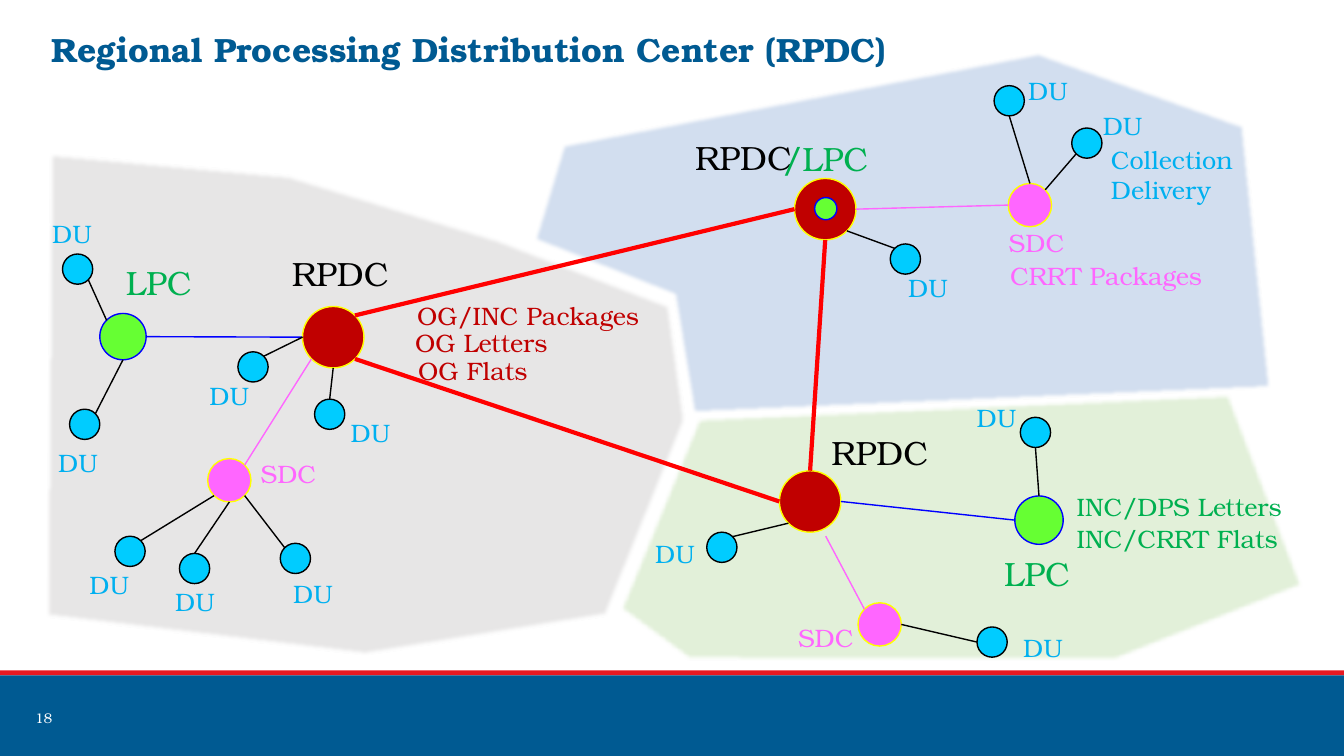
import math

import pptx
import pptx.dml.color
import pptx.enum.shapes
import pptx.enum.text
import pptx.oxml.ns
import pptx.util
from lxml import etree

ROWS, COLS = 75, 133.3  # square grid cells, a tenth of an inch each
SHAPE = pptx.enum.shapes.MSO_SHAPE
ALIGN = pptx.enum.text.PP_ALIGN
ANCHOR = pptx.enum.text.MSO_ANCHOR

NAVY, CRIMSON, WHITE, BLACK = "005A92", "E71921", "FFFFFF", "000000"
RED, DARK_RED, YELLOW, BLUE = "FF0000", "C00000", "FFFF00", "0000FF"
PINK, GREEN, SKY = "FF66FF", "00B050", "00B0F0"

# Facility kind: diameter, fill, outline
NODES = {
    "RPDC": (6.1, DARK_RED, YELLOW),
    "LPC": (4.6, "66FF33", BLUE),
    "big LPC": (4.8, "66FF33", BLUE),
    "inner LPC": (2.2, "66FF33", BLUE),
    "SDC": (4.3, PINK, YELLOW),
    "DU": (3, "00CCFF", BLACK),
}
# Label kind: box width, box height, text size, colour
LABELS = {
    "RPDC": (12.9, 5, 24, BLACK),
    "LPC": (12.9, 5, 24, GREEN),
    "/LPC": (12.9, 5, 24, GREEN),
    "SDC": (8.4, 4, 18, PINK),
    "DU": (6.1, 4, 18, SKY),
}
COMPASS = ("E", "SE", "S", "SW", "W", "NW", "N", "NE")


def rgb(value):
    return pptx.dml.color.RGBColor.from_string(value)


class Board:
    font = "TeX Gyre Bonum"

    def __init__(self, prs):
        self.s = prs.slides.add_slide(prs.slide_layouts[6])
        self.cell = prs.slide_height / ROWS

    def emu(self, *lengths):
        return [pptx.util.Emu(round(n * self.cell)) for n in lengths]

    def shape(self, kind, x, y, w, h, fill, line=None):
        sp = self.s.shapes.add_shape(kind, *self.emu(x, y, w, h))
        self.paint(sp, fill, line)

    def paint(self, sp, fill, line=None):
        sp.shadow.inherit = False
        sp.fill.solid()
        sp.fill.fore_color.rgb = rgb(fill)
        if line:
            sp.line.color.rgb = rgb(line)
            sp.line.width = pptx.util.Pt(1)
        else:
            sp.line.fill.background()

    def region(self, fill, points):
        corners = [self.emu(*point) for point in points]
        builder = self.s.shapes.build_freeform(*corners[0], scale=1.0)
        builder.add_line_segments(corners[1:], close=True)
        sp = builder.convert_to_shape()
        self.paint(sp, fill)
        effects = sp._element.spPr.find(pptx.oxml.ns.qn("a:effectLst"))
        etree.SubElement(effects, pptx.oxml.ns.qn("a:softEdge"), rad="31750")

    def node(self, kind, x, y):
        size, fill, line = NODES[kind]
        self.shape(SHAPE.OVAL, x - size / 2, y - size / 2, size, size, fill, line)
        return x, y, size / 2

    def rim(self, node, side):
        """Point on a circle in a compass direction."""
        x, y, radius = node
        angle = COMPASS.index(side) * math.pi / 4
        return x + radius * math.cos(angle), y + radius * math.sin(angle)

    def link(self, start, end, color=BLACK, width=1):
        line = self.s.shapes.add_connector(
            pptx.enum.shapes.MSO_CONNECTOR.STRAIGHT, *self.emu(*start, *end))
        line.line.color.rgb = rgb(color)
        line.line.width = pptx.util.Pt(width)
        etree.SubElement(line._element.spPr, pptx.oxml.ns.qn("a:effectLst"))

    def text(self, lines, x, y, w, h, size, color, align=ALIGN.LEFT,
             bold=False, anchor=ANCHOR.TOP, spacing=1.0):
        tf = self.s.shapes.add_textbox(*self.emu(x, y, w, h)).text_frame
        tf.word_wrap = align == ALIGN.LEFT
        tf.vertical_anchor = anchor
        for i, line in enumerate(lines):
            p = tf.add_paragraph() if i else tf.paragraphs[0]
            p.alignment = align
            p.line_spacing = spacing
            r = p.add_run()
            r.text = line
            r.font.name = self.font
            r.font.size = pptx.util.Pt(size)
            r.font.bold = bold
            r.font.color.rgb = rgb(color)

    def label(self, name, x, y):
        w, h, size, color = LABELS[name]
        self.text([name], x, y, w, h, size, color, ALIGN.CENTER)


def main():
    prs = pptx.Presentation()
    prs.slide_width = pptx.util.Inches(COLS / 10)
    prs.slide_height = pptx.util.Inches(ROWS / 10)
    b = Board(prs)

    # Footer and title
    b.shape(SHAPE.RECTANGLE, 0, 66.5, COLS, 0.5, CRIMSON)
    b.shape(SHAPE.RECTANGLE, 0, 67, COLS, 8, NAVY)
    b.text(["18"], 2.5, 69.9, 30, 4, 10, WHITE)
    b.text(["Regional Processing Distribution Center (RPDC)"], 4.1, -0.3, 114.9, 10.9,
           24, NAVY, bold=True, anchor=ANCHOR.MIDDLE, spacing=0.9)

    # Service regions
    b.region("E2F0D9", [(69.1, 41.4), (122, 39), (129.3, 58.1), (110.7, 65.5),
                        (68.1, 65.4), (61.3, 60.4)])
    b.region("D2DEEF", [(66.8, 29.4), (52.9, 23.9), (55.8, 14.3), (103, 5.2),
                        (123.3, 12.4), (126, 38.5), (68.7, 41)])
    b.region("E7E6E6", [(5, 15.2), (29, 17.4), (49.6, 23.7), (66.5, 30.2),
                        (68.1, 41.8), (60.3, 61.1), (36.3, 65), (4.6, 61.2)])

    # Facilities
    west = b.node("RPDC", 33.05, 33.45)
    north = b.node("RPDC", 81.85, 20.75)
    south = b.node("RPDC", 80.35, 49.75)
    b.node("inner LPC", 81.9, 20.7)
    west_lpc = b.node("LPC", 12.2, 33.4)
    south_lpc = b.node("big LPC", 103.05, 51.6)
    west_sdc = b.node("SDC", 22.75, 47.65)
    north_sdc = b.node("SDC", 102.15, 20.35)
    south_sdc = b.node("SDC", 87.25, 61.95)

    # Trunk lines between centers
    for start, out, end, into, color, width in [
        (north, "S", south, "N", RED, 3),
        (north, "W", west, "NE", RED, 3),
        (south, "W", west, "SE", RED, 3),
        (west, "W", west_lpc, "E", BLUE, 1),
        (south_lpc, "W", south, "E", BLUE, 1),
        (north, "E", north_sdc, "W", PINK, 1),
        (west, "SW", west_sdc, "NE", PINK, 1),
    ]:
        b.link(b.rim(start, out), b.rim(end, into), color, width)
    b.link((81.9, 53.2), b.rim(south_sdc, "NW"), PINK)

    # Delivery units: centre, side, hub, hub side, label position
    for x, y, out, hub, into, label_x, label_y in [
        (7.7, 26.7, "SE", west_lpc, "NW", 4.1, 21.2),
        (8.4, 42.1, "NE", west_lpc, "S", 4.7, 43.9),
        (25.1, 36.4, "NE", west, "W", 19.7, 37.2),
        (32.7, 41.1, "N", west, "S", 33.7, 40.9),
        (12.9, 54.7, "NE", west_sdc, "SW", 7.8, 56),
        (19.3, 56.4, "N", west_sdc, "S", 16.3, 57.7),
        (29.3, 55.4, "NW", west_sdc, "SE", 28, 56.9),
        (89.8, 25.7, "NW", north, "SE", 89, 26.5),
        (107.8, 14.2, "SW", north_sdc, "NE", 108.3, 10.5),
        (100.1, 10, "S", north_sdc, "N", 100.9, 7),
        (102.7, 42.9, "S", south_lpc, "N", 95.8, 39.4),
        (71.6, 54.3, "NE", south, "SW", 63.9, 52.9),
        (98.4, 63.7, "W", south_sdc, "E", 100.4, 62.2),
    ]:
        unit = b.node("DU", x, y)
        b.link(b.rim(unit, out), b.rim(hub, into))
        b.label("DU", label_x, label_y)

    # Facility names
    for name, x, y in [
        ("RPDC", 27.3, 24.6), ("RPDC", 67.3, 13.1), ("RPDC", 80.8, 42.4),
        ("LPC", 9.3, 25.5), ("/LPC", 75.4, 13.2), ("LPC", 96.4, 54.4),
        ("SDC", 24.4, 45), ("SDC", 77.7, 61.2), ("SDC", 98.6, 22.1),
    ]:
        b.label(name, x, y)

    # Mail handled at each kind of facility, kept inside the slide
    for lines, x, y, color in [
        (["OG/INC Packages"], 40.4, 29.3, DARK_RED),
        (["OG Letters"], 40.2, 32, DARK_RED),
        (["OG Flats"], 40.5, 34.8, DARK_RED),
        (["INC/DPS Letters"], 105.8, 48.3, GREEN),
        (["INC/CRRT Flats"], 105.8, 51.4, GREEN),
        (["CRRT Packages"], 99.2, 25.3, PINK),
        (["Collection", "Delivery"], 109.2, 13.8, SKY),
    ]:
        width = min(27.6, COLS - x)
        b.text(lines, x, y, width, 4 + 3.1 * (len(lines) - 1), 18, color)

    prs.save("out.pptx")


if __name__ == "__main__":
    main()
